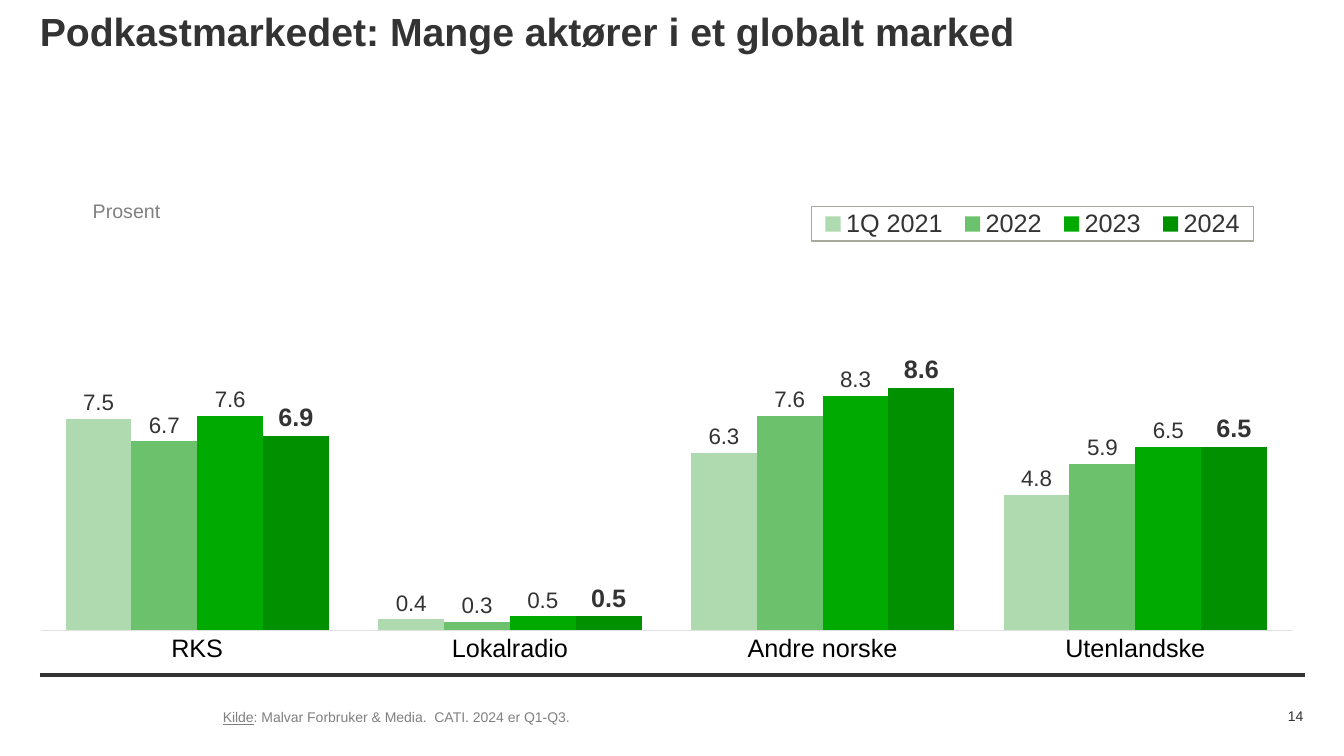
from dataclasses import dataclass

from pptx import Presentation
from pptx.chart.data import CategoryChartData
from pptx.dml.color import RGBColor
from pptx.enum.chart import XL_CHART_TYPE, XL_LABEL_POSITION, XL_LEGEND_POSITION, XL_TICK_LABEL_POSITION, XL_TICK_MARK
from pptx.enum.shapes import MSO_CONNECTOR
from pptx.enum.text import MSO_ANCHOR, MSO_AUTO_SIZE, PP_ALIGN
from pptx.oxml import parse_xml
from pptx.oxml.ns import nsdecls, qn
from pptx.util import Pt


@dataclass(frozen=True)
class Theme:
    font: str = "Arial"
    ink: str = "333333"
    grey: str = "808080"
    black: str = "000000"
    axis: str = "E0E0E0"
    frame: str = "A8A89C"
    title: float = 28
    large: float = 18
    label: float = 16
    unit: float = 14
    small: float = 10


@dataclass(frozen=True)
class Box:
    x: float
    y: float
    w: float
    h: float

    def lengths(self) -> tuple:
        return Pt(self.x), Pt(self.y), Pt(self.w), Pt(self.h)


T = Theme()


@dataclass(frozen=True)
class Year:
    name: str
    values: tuple
    color: str
    size: float = T.label
    bold: bool = False


@dataclass(frozen=True)
class Note:
    box: Box
    runs: tuple  # (text, underlined)
    size: float
    color: str
    align: PP_ALIGN = PP_ALIGN.LEFT
    anchor: MSO_ANCHOR = MSO_ANCHOR.MIDDLE


CATEGORIES = ("RKS", "Lokalradio", "Andre norske", "Utenlandske")
YEARS = (
    Year("1Q 2021", (7.5, 0.4, 6.3, 4.8), "AFD9AF"),
    Year("2022", (6.7, 0.3, 7.6, 5.9), "6CC26C"),
    Year("2023", (7.6, 0.5, 8.3, 6.5), "00AA00"),
    Year("2024", (6.9, 0.5, 8.6, 6.5), "009000", T.large, True),
)
NOTES = (
    Note(Box(66.24, 141.84, 60, 17.28), (("Prosent", False),), T.unit, T.grey,
         anchor=MSO_ANCHOR.TOP),
    Note(Box(159.12, 497.52, 522, 29.52),
         (("Kilde", True), (": Malvar Forbruker & Media.  CATI. 2024 er Q1-Q3.", False)),
         T.small, T.grey),
    Note(Box(854.64, 503.28, 76.32, 15.84), (("14", False),), T.small, T.ink, PP_ALIGN.RIGHT),
)


def set_font(font, size: float, color: str, bold: bool = False) -> None:
    font.name, font.size, font.bold = T.font, Pt(size), bold
    font.color.rgb = RGBColor.from_string(color)


def set_frame(tf, anchor: MSO_ANCHOR) -> None:
    tf.margin_left = tf.margin_right = tf.margin_top = tf.margin_bottom = 0
    tf.vertical_anchor, tf.word_wrap = anchor, True
    tf.auto_size = MSO_AUTO_SIZE.NONE


def add_note(s, note: Note) -> None:
    tf = s.shapes.add_textbox(*note.box.lengths()).text_frame
    set_frame(tf, note.anchor)
    p = tf.paragraphs[0]
    p.alignment = note.align
    for text, underlined in note.runs:
        r = p.add_run()
        r.text = text
        if underlined:
            r.font.underline = True
    set_font(p.font, note.size, note.color)


def manual_layout(box: Box, target: str = ""):
    """Place a chart part by fractions of the chart area."""
    inner = f'<c:layoutTarget val="{target}"/>' if target else ""
    modes = '<c:xMode val="edge"/><c:yMode val="edge"/>'
    sides = "".join(f'<c:{k} val="{getattr(box, k)}"/>' for k in "xywh")
    return parse_xml(f'<c:layout {nsdecls("c")}><c:manualLayout>{inner}{modes}{sides}'
                     "</c:manualLayout></c:layout>")


def place(part, index: int, layout) -> None:
    for old in part.findall(qn("c:layout")):
        part.remove(old)
    part.insert(index, layout)


def add_podcast_chart(s, box: Box) -> None:
    data = CategoryChartData(number_format="0.0")
    data.categories = CATEGORIES
    for year in YEARS:
        data.add_series(year.name, year.values)
    chart = s.shapes.add_chart(XL_CHART_TYPE.COLUMN_CLUSTERED, *box.lengths(), data).chart
    chart.has_title = False
    set_font(chart.font, T.label, T.ink)

    # Columns and their labels
    plot = chart.plots[0]
    plot.gap_width, plot.overlap, plot.vary_by_categories = 75, 0, False
    for series, year in zip(plot.series, YEARS):
        series.format.fill.solid()
        series.format.fill.fore_color.rgb = RGBColor.from_string(year.color)
        labels = series.data_labels
        labels.show_value = True
        labels.number_format, labels.number_format_is_linked = "0.0", False
        labels.position = XL_LABEL_POSITION.OUTSIDE_END
        set_font(labels.font, year.size, T.ink, year.bold)

    # Axes
    values = chart.value_axis
    values.minimum_scale, values.maximum_scale, values.major_unit = 0, 15, 5
    values.has_major_gridlines = values.visible = False
    cats = chart.category_axis
    cats.major_tick_mark = cats.minor_tick_mark = XL_TICK_MARK.NONE
    cats.tick_label_position = XL_TICK_LABEL_POSITION.NEXT_TO_AXIS
    cats.tick_labels.offset = 0
    set_font(cats.tick_labels.font, T.large, T.black)
    cats.format.line.color.rgb = RGBColor.from_string(T.axis)
    cats.format.line.width = Pt(0.75)

    # Framed legend and plot placement
    chart.has_legend = True
    legend = chart.legend
    legend.position, legend.include_in_layout = XL_LEGEND_POSITION.BOTTOM, False
    set_font(legend.font, T.large, T.ink)
    frame = parse_xml(f'<c:spPr {nsdecls("c", "a")}><a:ln w="9525"><a:solidFill>'
                      f'<a:srgbClr val="{T.frame}"/></a:solidFill></a:ln></c:spPr>')
    legend._element.find(qn("c:txPr")).addprevious(frame)
    place(legend._element, 1, manual_layout(Box(0.61, 0.04, 0.35, 0.07)))
    area = chart._chartSpace.chart.plotArea
    place(area, 0, manual_layout(Box(0, 0.04, 0.99, 0.87), "inner"))


def add_rule(s, x1: float, x2: float, y: float) -> None:
    line = s.shapes.add_connector(MSO_CONNECTOR.STRAIGHT, Pt(x1), Pt(y), Pt(x2), Pt(y))
    line.line.color.rgb = RGBColor.from_string(T.ink)
    line.line.width = Pt(3)
    line._element.spPr.append(parse_xml(f'<a:effectLst {nsdecls("a")}/>'))


def add_title(s, text: str, box: Box) -> None:
    sp = s.shapes.title
    sp.left, sp.top, sp.width, sp.height = box.lengths()
    tf = sp.text_frame
    tf.text = text
    set_frame(tf, MSO_ANCHOR.TOP)
    p = tf.paragraphs[0]
    p.alignment = PP_ALIGN.LEFT
    set_font(p.font, T.title, T.ink, True)


def main() -> None:
    prs = Presentation()
    prs.slide_width, prs.slide_height = Pt(960), Pt(540)
    s = prs.slides.add_slide(prs.slide_layouts[5])
    add_rule(s, 28.4, 932, 482)
    add_title(s, "Podkastmarkedet: Mange aktører i et globalt marked", Box(28.4, 5.2, 903, 32))
    add_podcast_chart(s, Box(28.8, 133.9, 902.9, 347.8))
    for note in NOTES:
        add_note(s, note)
    prs.save("out.pptx")


if __name__ == "__main__":
    main()
